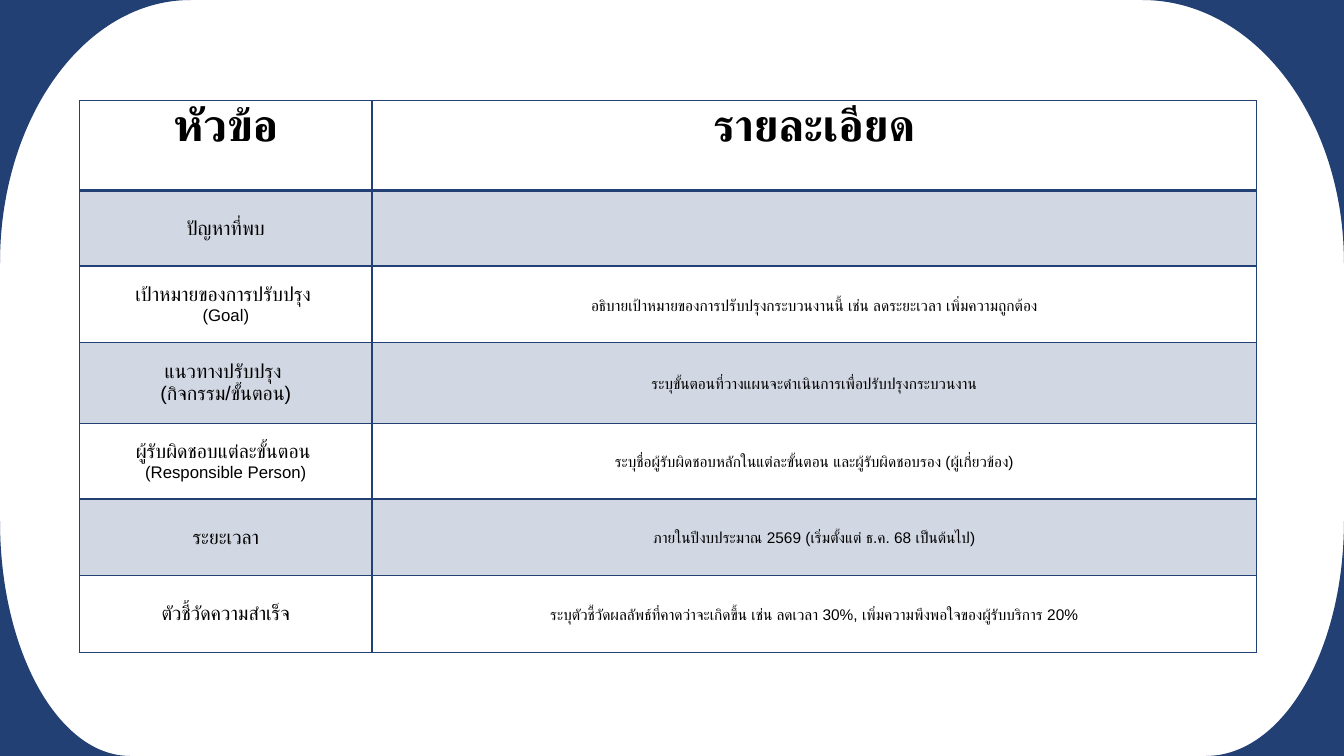
from lxml import etree
from pptx import Presentation
from pptx import util as u
from pptx.dml.color import RGBColor
from pptx.enum import text as t
from pptx.oxml.ns import qn

NAVY = "224073"
WIDE, HIGH = 13.33, 7.5
CURVES = [
    ((WIDE, 0), (11.33, 0), (12.44, 0), (WIDE, 1.17), (WIDE, 2.61)),
    ((WIDE, HIGH), (WIDE, 5.17), (WIDE, 6.46), (12.72, HIGH), (11.96, HIGH)),
    ((0, 0), (1.89, 0), (0.84, 0), (0, 1.17), (0, 2.61)),
    ((0, HIGH), (0, 5.17), (0, 6.46), (0.58, HIGH), (1.29, HIGH)),
]
COLS = [2.9, 8.77]
ROWS = [0.89, 0.75, 0.76, 0.8, 0.75, 0.76, 0.76]
HEADS = ["หัวข้อ", "รายละเอียด"]
TOPICS = [
    ([("ปัญหาที่พบ", 14)], ""),
    ([("เป้าหมายของการปรับปรุง ", 14), ("(Goal)", 12)],
     "อธิบายเป้าหมายของการปรับปรุงกระบวนงานนี้ เช่น ลดระยะเวลา เพิ่มความถูกต้อง"),
    ([("แนวทางปรับปรุง ", 14), ("(กิจกรรม/ขั้นตอน)", 14)],
     "ระบุขั้นตอนที่วางแผนจะดำเนินการเพื่อปรับปรุงกระบวนงาน"),
    ([("ผู้รับผิดชอบแต่ละขั้นตอน ", 14), ("(Responsible Person)", 12)],
     "ระบุชื่อผู้รับผิดชอบหลักในแต่ละขั้นตอน และผู้รับผิดชอบรอง (ผู้เกี่ยวข้อง)"),
    ([("ระยะเวลา", 14)],
     "ภายในปีงบประมาณ 2569 (เริ่มตั้งแต่ ธ.ค. 68 เป็นต้นไป)"),
    ([("ตัวชี้วัดความสำเร็จ", 14)],
     "ระบุตัวชี้วัดผลลัพธ์ที่คาดว่าจะเกิดขึ้น เช่น ลดเวลา 30%, "
     "เพิ่มความพึงพอใจของผู้รับบริการ 20%"),
]


def tint(fill, color, alpha=None):
    fill.solid()
    fill.fore_color.rgb = RGBColor.from_string(color)
    if alpha:
        node = fill._xPr.find(qn("a:solidFill"))[0]
        etree.SubElement(node, qn("a:alpha"), val=str(alpha * 1000))


def bend(shape):
    lines = list(shape._element.iter(qn("a:lnTo")))[1:4]
    curve = etree.Element(qn("a:cubicBezTo"))
    lines[0].addprevious(curve)
    for line in lines:
        curve.append(line[0])
        line.getparent().remove(line)


def corner(slide, *points):
    tip, *rest = [(u.Inches(x), u.Inches(y)) for x, y in points]
    pen = slide.shapes.build_freeform(*tip)
    pen.add_line_segments(rest, close=True)
    shape = pen.convert_to_shape()
    bend(shape)
    shape.shadow.inherit = False
    tint(shape.fill, NAVY)
    shape.line.fill.background()


def write(cell, lines, bold=False, color="000000", space=None, after=None):
    para = cell.text_frame.paragraphs[0]
    para.alignment = t.PP_ALIGN.CENTER
    if space:
        para.line_spacing = space
        para.space_after = u.Pt(after)
    for i, (words, size) in enumerate(lines):
        if i:
            para.add_line_break()
        run = para.add_run()
        run.text = words
        run.font.size = u.Pt(size)
        run.font.bold = bold
        run.font.name = "Arial"
        run.font.color.rgb = RGBColor.from_string(color)
        etree.SubElement(run.font._element, qn("a:cs"), typeface="Arial")


def frame(cell, base=1):
    props = cell._tc.get_or_add_tcPr()
    for side, width in zip("LRTB", (1, 1, 1, base)):
        line = etree.SubElement(props, qn("a:ln" + side), w=str(u.Pt(width)))
        fill = etree.SubElement(line, qn("a:solidFill"))
        etree.SubElement(fill, qn("a:srgbClr"), val=NAVY)


def shade(cell, band):
    if band:
        tint(cell.fill, NAVY, 20)
    else:
        cell.fill.background()


def grid(slide):
    table = slide.shapes.add_table(
        len(ROWS), len(COLS), u.Inches(0.79), u.Inches(1),
        u.Inches(sum(COLS)), u.Inches(sum(ROWS))).table
    table.first_row = table.horz_banding = False
    for col, width in zip(table.columns, COLS):
        col.width = u.Inches(width)
    for row, height in zip(table.rows, ROWS):
        row.height = u.Inches(height)
    for col, head in enumerate(HEADS):
        cell = table.cell(0, col)
        frame(cell, 2)
        shade(cell, False)
        cell.margin_top = 0
        write(cell, [(head, 32)], bold=True)
    for row, (topic, detail) in enumerate(TOPICS, 1):
        left, right = table.cell(row, 0), table.cell(row, 1)
        for cell in (left, right):
            frame(cell)
            shade(cell, row % 2)
        left.vertical_anchor = t.MSO_ANCHOR.MIDDLE
        write(left, topic)
        if detail:
            right.vertical_anchor = t.MSO_ANCHOR.MIDDLE
            right.margin_left = right.margin_right = u.Inches(0.07)
            right.margin_top = right.margin_bottom = 0
            write(right, [(detail, 11)], space=1.15, after=10)


def main():
    deck = Presentation()
    deck.slide_width, deck.slide_height = u.Inches(WIDE), u.Inches(HIGH)
    slide = deck.slides.add_slide(deck.slide_layouts[6])
    tint(slide.background.fill, "FFFFFF")
    for curve in CURVES:
        corner(slide, *curve)
    grid(slide)
    deck.save("out.pptx")


if __name__ == "__main__":
    main()
